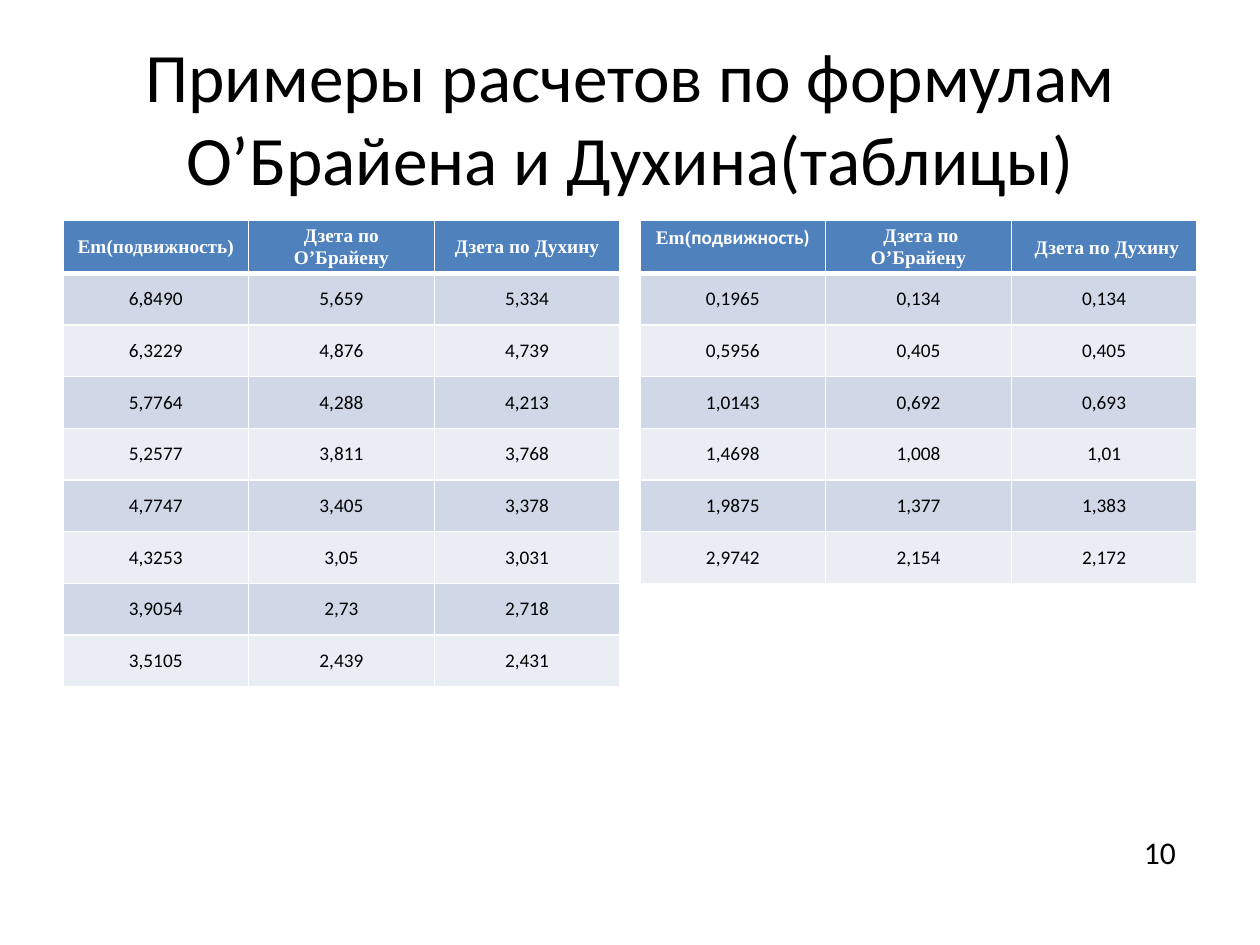
from pptx import Presentation
from pptx.dml.color import RGBColor
from pptx.enum.text import MSO_ANCHOR, PP_ALIGN
from pptx.oxml.ns import qn
from pptx.util import Inches, Pt
from lxml.etree import SubElement

SERIF, SANS = "Times New Roman", "Calibri"
HEAD = {"size": Pt(11), "name": SERIF, "bold": True, "color": "FFFFFF"}
BODY = {"size": Pt(11), "name": SANS, "bold": False, "color": "000000"}


def write(para, text, style):
    """Add a run to the paragraph and set its font from the style."""
    run = para.add_run()
    run.text = text
    for key, val in style.items():
        if key == "color":
            run.font.color.rgb = RGBColor.from_string(val)
        else:
            setattr(run.font, key, val)


def border(cell, row):
    """Draw white cell borders, thick between the header and the body."""
    props = cell._tc.get_or_add_tcPr()
    for side in "LRTB":
        thick = (row, side) in ((0, "B"), (1, "T"))
        line = SubElement(props, qn("a:ln" + side), w=str(Pt(3 if thick else 1)))
        fill = SubElement(line, qn("a:solidFill"))
        SubElement(fill, qn("a:srgbClr"), val="FFFFFF")


deck = Presentation()
deck.slide_width, deck.slide_height = Inches(10), Inches(7.5)
slide = deck.slides.add_slide(deck.slide_layouts[5])

title = slide.shapes.title
title.left, title.top = Inches(0.5), Inches(0.3)
title.width, title.height = Inches(9), Inches(1.25)
title.text_frame.vertical_anchor = MSO_ANCHOR.MIDDLE
para = title.text_frame.paragraphs[0]
para.alignment = PP_ALIGN.CENTER
write(para, "Примеры расчетов по формулам О’Брайена и Духина(таблицы)",
      {"size": Pt(39.6), "name": SANS, "color": "000000"})

# Each header cell is a list of (text, changes to the header style).
tables = [
    (0.5, MSO_ANCHOR.MIDDLE,
     [[("Em(подвижность)", {})],
      [("Дзета по О’Брайену", {})],
      [("Дзета по Духину", {})]],
     [("6,8490", "5,659", "5,334"),
      ("6,3229", "4,876", "4,739"),
      ("5,7764", "4,288", "4,213"),
      ("5,2577", "3,811", "3,768"),
      ("4,7747", "3,405", "3,378"),
      ("4,3253", "3,05", "3,031"),
      ("3,9054", "2,73", "2,718"),
      ("3,5105", "2,439", "2,431")]),
    (5.08, MSO_ANCHOR.TOP,
     [[("Em(", {}), ("подвижность)", {"name": SANS})],
      [(" Дзета по О’Брайену", {})],
      [(" ", {"size": Pt(13)}), ("Дзета по Духину", {})]],
     [("0,1965", "0,134", "0,134"),
      ("0,5956", "0,405", "0,405"),
      ("1,0143", "0,692", "0,693"),
      ("1,4698", "1,008", "1,01"),
      ("1,9875", "1,377", "1,383"),
      ("2,9742", "2,154", "2,172")]),
]

for left, anchor, heads, data in tables:
    count = len(data) + 1
    grid = slide.shapes.add_table(count, 3, Inches(left), Inches(1.75),
                                  Inches(4.42), Inches(0.41 * count)).table
    body = [[[(text, {})] for text in row] for row in data]
    for r, row in enumerate([heads] + body):
        base = BODY if r else HEAD
        shade = ("E9EDF4", "D0D8E8")[r % 2] if r else "4F81BD"
        for c, runs in enumerate(row):
            cell = grid.cell(r, c)
            flush = r > 0 and c == 0
            cell.margin_left = cell.margin_right = Inches(0 if flush else 0.1)
            cell.margin_top = cell.margin_bottom = Inches(0 if flush else 0.04)
            cell.vertical_anchor = anchor if r == c == 0 else MSO_ANCHOR.MIDDLE
            border(cell, r)
            cell.fill.solid()
            cell.fill.fore_color.rgb = RGBColor.from_string(shade)
            para = cell.text_frame.paragraphs[0]
            para.alignment = PP_ALIGN.CENTER
            for text, change in runs:
                write(para, text, {**base, **change})

number = slide.shapes.add_textbox(Inches(8.98), Inches(6.56),
                                  Inches(0.47), Inches(0.4))
number.text_frame.word_wrap = True
write(number.text_frame.paragraphs[0], "10",
      {"size": Pt(18), "name": SANS, "color": "000000"})

deck.save("out.pptx")
